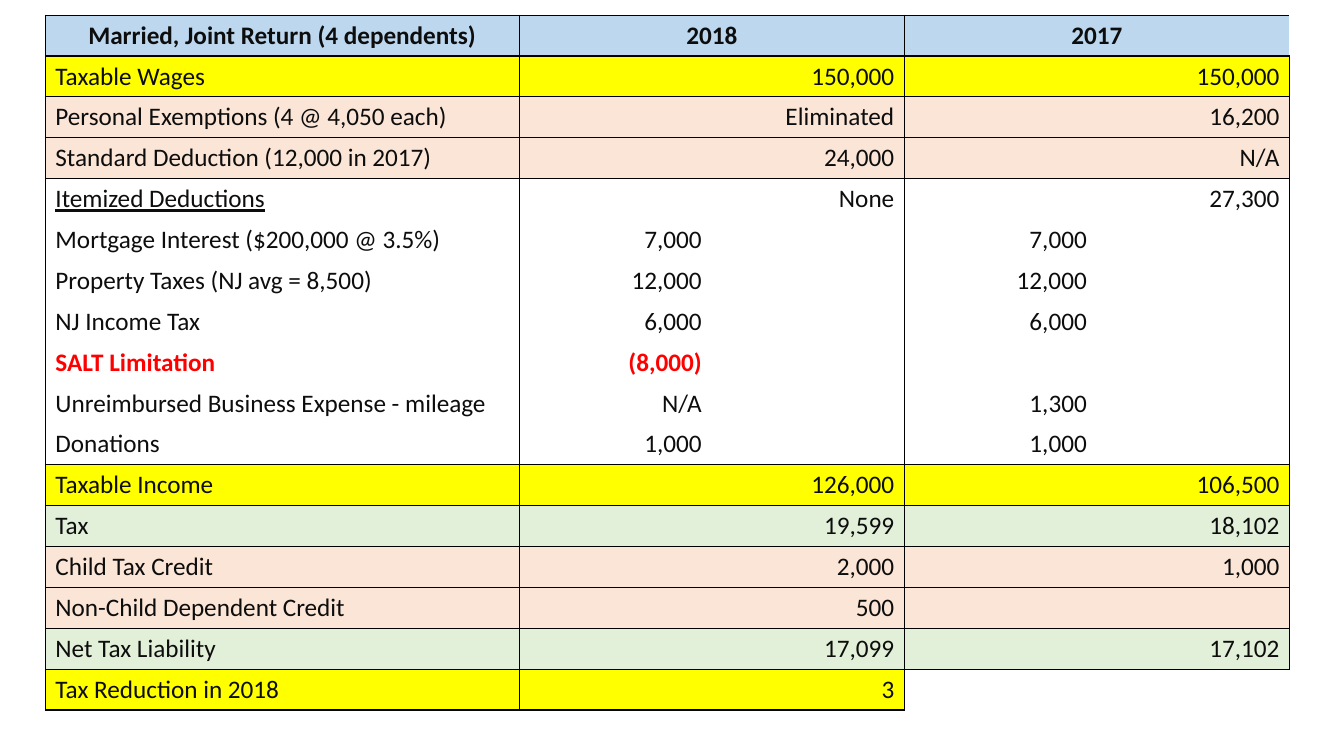
from dataclasses import dataclass

from lxml import etree
from pptx import Presentation
from pptx.dml.color import RGBColor
from pptx.enum.text import MSO_ANCHOR, PP_ALIGN
from pptx.oxml.ns import qn
from pptx.table import Table, _Cell
from pptx.util import Inches, Pt

LEFT, CENTER, RIGHT = PP_ALIGN.LEFT, PP_ALIGN.CENTER, PP_ALIGN.RIGHT
MIDDLE = MSO_ANCHOR.MIDDLE

FONT, FONT_SIZE = "Calibri", 18
INK, RED, BLACK = "0D0D0D", "FF0000", "000000"
BLUE, YELLOW, PEACH, GREEN = "BDD7EE", "FFFF00", "FBE5D6", "E2F0D9"

LABEL_WIDTH, VALUE_WIDTH, ROW_HEIGHT = 4.7, 1.91, 0.4
YEAR_COLUMNS = (1, 3)  # each year has a detail column and a total column


@dataclass
class TaxRow:
    label: str
    values: tuple[str, str]
    fill: str = ""
    color: str = INK
    bold: bool = False
    underline: bool = False
    header: bool = False
    detail: bool = False
    last: bool = False


ROWS = [
    TaxRow("Married, Joint Return (4 dependents)", ("2018", "2017"), BLUE, bold=True, header=True),
    TaxRow("Taxable Wages", ("150,000", "150,000"), YELLOW),
    TaxRow("Personal Exemptions (4 @ 4,050 each)", ("Eliminated", "16,200"), PEACH),
    TaxRow("Standard Deduction (12,000 in 2017)", ("24,000", "N/A"), PEACH),
    TaxRow("Itemized Deductions", ("None", "27,300"), underline=True),
    TaxRow("Mortgage Interest ($200,000 @ 3.5%)", ("7,000", "7,000"), detail=True),
    TaxRow("Property Taxes (NJ avg = 8,500)", ("12,000", "12,000"), detail=True),
    TaxRow("NJ Income Tax", ("6,000", "6,000"), detail=True),
    TaxRow("SALT Limitation", ("(8,000)", ""), color=RED, bold=True, detail=True),
    TaxRow("Unreimbursed Business Expense - mileage", ("N/A", "1,300"), detail=True),
    TaxRow("Donations", ("1,000", "1,000"), detail=True),
    TaxRow("Taxable Income", ("126,000", "106,500"), YELLOW),
    TaxRow("Tax", ("19,599", "18,102"), GREEN),
    TaxRow("Child Tax Credit", ("2,000", "1,000"), PEACH),
    TaxRow("Non-Child Dependent Credit", ("500", ""), PEACH),
    TaxRow("Net Tax Liability", ("17,099", "17,102"), GREEN),
    TaxRow("Tax Reduction in 2018", ("3", ""), YELLOW, last=True),
]


def rgb(color: str) -> RGBColor:
    return RGBColor.from_string(color)


def write(cell: _Cell, text: str, row: TaxRow, alignment: PP_ALIGN,
          underline: bool = False) -> None:
    cell.vertical_anchor = MIDDLE
    para = cell.text_frame.paragraphs[0]
    para.text = text
    para.alignment = alignment
    para.font.size = Pt(FONT_SIZE)
    for span in para.runs:
        font = span.font
        font.name, font.size = FONT, Pt(FONT_SIZE)
        font.bold, font.underline = row.bold, underline
        font.color.rgb = rgb(row.color)


def set_borders(cell: _Cell, sides: str) -> None:
    properties = cell._tc.get_or_add_tcPr()
    for side in "LRTB":
        line = etree.SubElement(properties, qn(f"a:ln{side}"), w=str(Pt(1)))
        if side in sides:
            solid = etree.SubElement(line, qn("a:solidFill"))
            etree.SubElement(solid, qn("a:srgbClr"), val=BLACK)
        else:
            etree.SubElement(line, qn("a:noFill"))


def border_sides(index: int, column: int) -> str:
    row = ROWS[index]
    outside = row.last and column >= YEAR_COLUMNS[1]
    sides = "" if row.detail else "T"
    if column in (0, *YEAR_COLUMNS):
        sides += "L"
    if column in (0, 2, 4) and not outside:
        sides += "R"
    closes = row.last or not ROWS[index + 1].detail
    if closes and not outside:
        sides += "B"
    return sides


def fill_row(table: Table, index: int, row: TaxRow) -> None:
    # Borders and background
    for column in range(len(table.columns)):
        cell = table.cell(index, column)
        set_borders(cell, border_sides(index, column))
        if row.fill and not (row.last and column >= YEAR_COLUMNS[1]):
            cell.fill.solid()
            cell.fill.fore_color.rgb = rgb(row.fill)
        else:
            cell.fill.background()

    # Label and yearly values
    write(table.cell(index, 0), row.label, row, CENTER if row.header else LEFT, row.underline)
    for column, value in zip(YEAR_COLUMNS, row.values):
        if row.header:
            table.cell(index, column).merge(table.cell(index, column + 1))
        target = column if row.header or row.detail else column + 1
        write(table.cell(index, target), value, row, CENTER if row.header else RIGHT)


def main() -> None:
    deck = Presentation()
    deck.slide_width, deck.slide_height = Inches(13.33), Inches(7.5)
    page = deck.slides.add_slide(deck.slide_layouts[6])

    # Table frame
    widths = [LABEL_WIDTH] + [VALUE_WIDTH] * 4
    table = page.shapes.add_table(
        len(ROWS), len(widths), Inches(0.45), Inches(0.15),
        Inches(sum(widths)), Inches(ROW_HEIGHT * len(ROWS))).table
    table.first_row = table.horz_banding = False
    for column, width in zip(table.columns, widths):
        column.width = Inches(width)

    # Table content
    for index, row in enumerate(ROWS):
        table.rows[index].height = Inches(ROW_HEIGHT)
        fill_row(table, index, row)

    deck.save("out.pptx")


if __name__ == "__main__":
    main()
